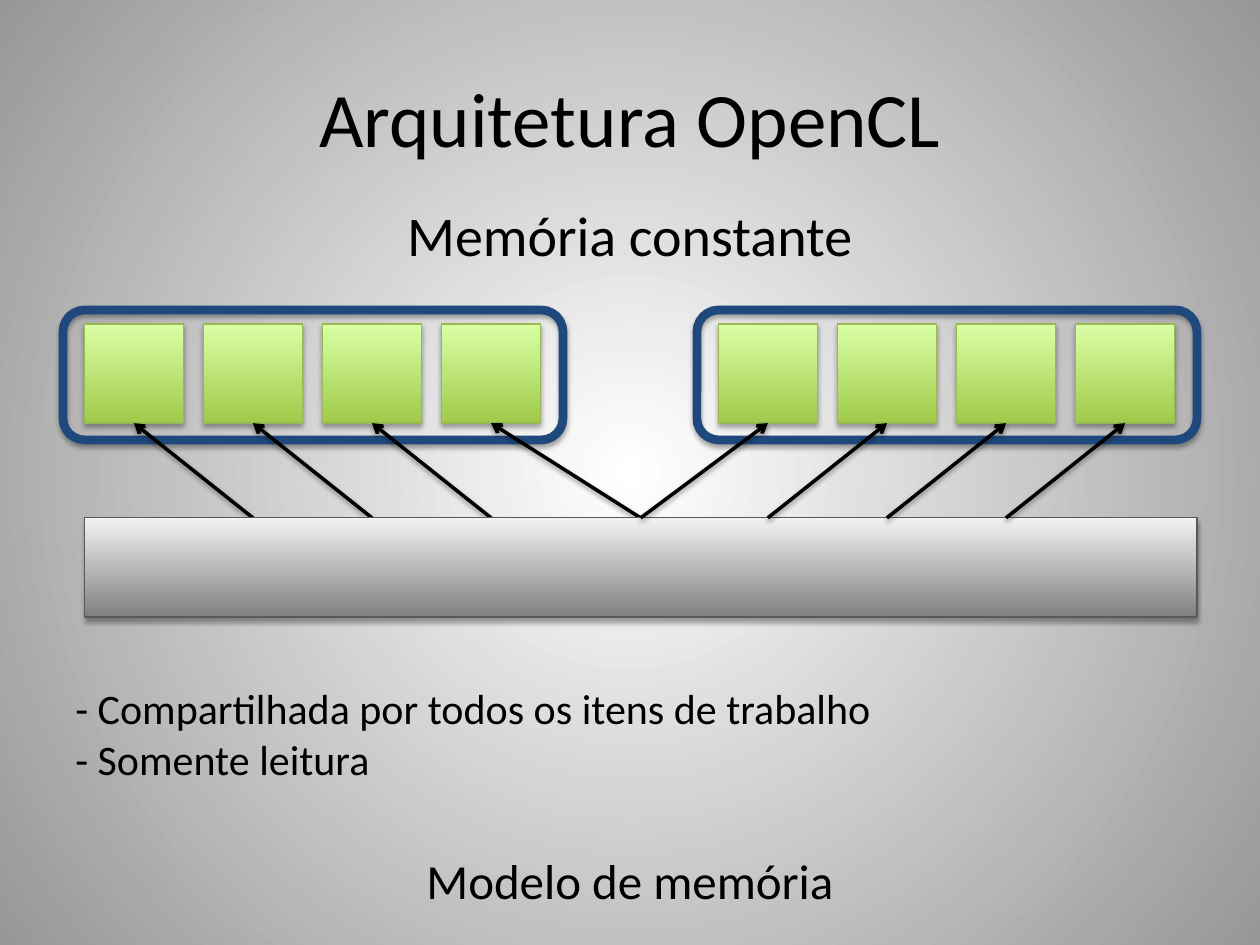
from dataclasses import dataclass

import lxml.etree
import pptx
import pptx.dml.color
import pptx.enum.shapes
import pptx.enum.text
import pptx.oxml.ns
import pptx.util

Cm, Pt = pptx.util.Cm, pptx.util.Pt
SHAPES = pptx.enum.shapes.MSO_SHAPE
ALIGN = pptx.enum.text.PP_ALIGN
ANCHOR = pptx.enum.text.MSO_ANCHOR

# Lengths in centimetres
ITEM_SIZE = 2.0
ITEM_PITCH = 2.4
ITEM_COUNT = 4
ITEM_TOP = 6.53
ITEM_INSET = 0.43
GROUP_TOP, GROUP_WIDTH, GROUP_HEIGHT = 6.25, 10.08, 2.62
BAR_LEFT, BAR_TOP, BAR_WIDTH = 1.7, 10.44, 22.43
TEXT_LEFT, TEXT_WIDTH = 1.27, 22.86


@dataclass(frozen=True)
class WorkGroup:
    left: float
    direction: int  # side towards which the arrows lean
    shared_item: int  # item whose arrow starts at the middle of the bar


@dataclass(frozen=True)
class BoxStyle:
    line: str
    line_width: float = 0.75
    gradient: tuple[str, str] | None = None  # bottom, top


GROUP_STYLE = BoxStyle("1F497D", 5)
ITEM_STYLE = BoxStyle("98B955", gradient=("A0CA4A", "DAFFA5"))
BAR_STYLE = BoxStyle("595959", gradient=("808080", "F2F2F2"))
LEFT_GROUP = WorkGroup(1.27, 1, ITEM_COUNT - 1)
RIGHT_GROUP = WorkGroup(14.05, -1, 0)


def color(value: str) -> pptx.dml.color.RGBColor:
    return pptx.dml.color.RGBColor.from_string(value)


def add_element(parent, tag: str, **attributes):
    element = lxml.etree.SubElement(parent, pptx.oxml.ns.qn(tag))
    for name, value in attributes.items():
        element.set(name, str(value))
    return element


def set_gradient(fill, first: str, last: str) -> None:
    fill.gradient()
    for stop, value in zip(fill.gradient_stops, (first, last)):
        stop.color.rgb = color(value)


def add_shadow(shape, opacity: int, distance: float) -> None:
    effects = add_element(shape._element.spPr, "a:effectLst")
    shadow = add_element(effects, "a:outerShdw", blurRad=Pt(3.1), dist=Pt(distance),
                         dir=90 * 60000, rotWithShape=0)
    black = add_element(shadow, "a:srgbClr", val="000000")
    add_element(black, "a:alpha", val=opacity * 1000)


def set_background(slide) -> None:
    set_gradient(slide.background.fill, "FFFFFF", "979797")
    gradient = slide._element.find(".//" + pptx.oxml.ns.qn("a:gradFill"))
    gradient.remove(gradient.find(pptx.oxml.ns.qn("a:lin")))
    circle = add_element(gradient, "a:path", path="circle")
    add_element(circle, "a:fillToRect", l=50000, t=50000, r=50000, b=50000)


def add_text(slide, *lines: str, top: float, height: float, size: int,
             align=ALIGN.CENTER, anchor=ANCHOR.TOP):
    box = slide.shapes.add_textbox(Cm(TEXT_LEFT), Cm(top), Cm(TEXT_WIDTH), Cm(height))
    frame = box.text_frame
    frame.word_wrap = True
    frame.vertical_anchor = anchor
    frame.text = "\n".join(lines)
    for paragraph in frame.paragraphs:
        paragraph.alignment = align
        font = paragraph.runs[0].font
        font.name, font.size = "Calibri", Pt(size)
        font.color.rgb = color("000000")
    return box


def add_box(slide, kind, left: float, top: float, width: float, height: float,
            style: BoxStyle):
    shape = slide.shapes.add_shape(kind, Cm(left), Cm(top), Cm(width), Cm(height))
    if style.gradient:
        set_gradient(shape.fill, *style.gradient)
        shape.fill.gradient_angle = 90
    else:
        shape.fill.background()
    shape.line.color.rgb = color(style.line)
    shape.line.width = Pt(style.line_width)
    add_shadow(shape, opacity=35, distance=1.8)
    return shape


def add_arrow(slide, item, end_x: float, bar=None) -> None:
    """Draw a line from an item to the bar, with the arrowhead at the item."""
    arrow = slide.shapes.add_connector(
        pptx.enum.shapes.MSO_CONNECTOR.STRAIGHT,
        item.left, item.top + item.height, Cm(end_x), Cm(BAR_TOP))
    arrow.begin_connect(item, 2)
    if bar is not None:
        arrow.end_connect(bar, 0)
    arrow.line.color.rgb = color("000000")
    arrow.line.width = Pt(2)
    add_element(arrow.line._get_or_add_ln(), "a:headEnd", type="arrow")
    add_shadow(arrow, opacity=38, distance=1.6)


def add_work_group(slide, group: WorkGroup, bar) -> None:
    add_box(slide, SHAPES.ROUNDED_RECTANGLE, group.left, GROUP_TOP,
            GROUP_WIDTH, GROUP_HEIGHT, GROUP_STYLE)
    lefts = [group.left + ITEM_INSET + i * ITEM_PITCH for i in range(ITEM_COUNT)]
    items = [add_box(slide, SHAPES.RECTANGLE, left, ITEM_TOP, ITEM_SIZE, ITEM_SIZE,
                     ITEM_STYLE) for left in lefts]
    for i, (left, item) in enumerate(zip(lefts, items)):
        end_x = left + ITEM_SIZE / 2 + group.direction * ITEM_PITCH
        add_arrow(slide, item, end_x, bar if i == group.shared_item else None)


def main() -> None:
    presentation = pptx.Presentation()
    presentation.slide_width, presentation.slide_height = Cm(25.4), Cm(19.05)
    slide = presentation.slides.add_slide(presentation.slide_layouts[6])
    set_background(slide)

    # Headings
    add_text(slide, "Arquitetura OpenCL", top=0.76, height=3.18, size=44,
             anchor=ANCHOR.MIDDLE)
    add_text(slide, "Modelo de memória", top=17.02, height=1.45, size=28)
    add_text(slide, "Memória constante", top=3.91, height=1.63, size=32)

    # Constant memory and work groups; the bar covers the left arrows' ends
    bar = add_box(slide, SHAPES.RECTANGLE, BAR_LEFT, BAR_TOP, BAR_WIDTH, ITEM_SIZE,
                  BAR_STYLE)
    add_work_group(slide, LEFT_GROUP, bar)
    slide.shapes._spTree.append(bar._element)
    add_work_group(slide, RIGHT_GROUP, bar)

    # Properties
    add_text(slide, "- Compartilhada por todos os itens de trabalho",
             "- Somente leitura", top=13.64, height=2.31, size=24, align=ALIGN.LEFT)

    presentation.save("out.pptx")


if __name__ == "__main__":
    main()
